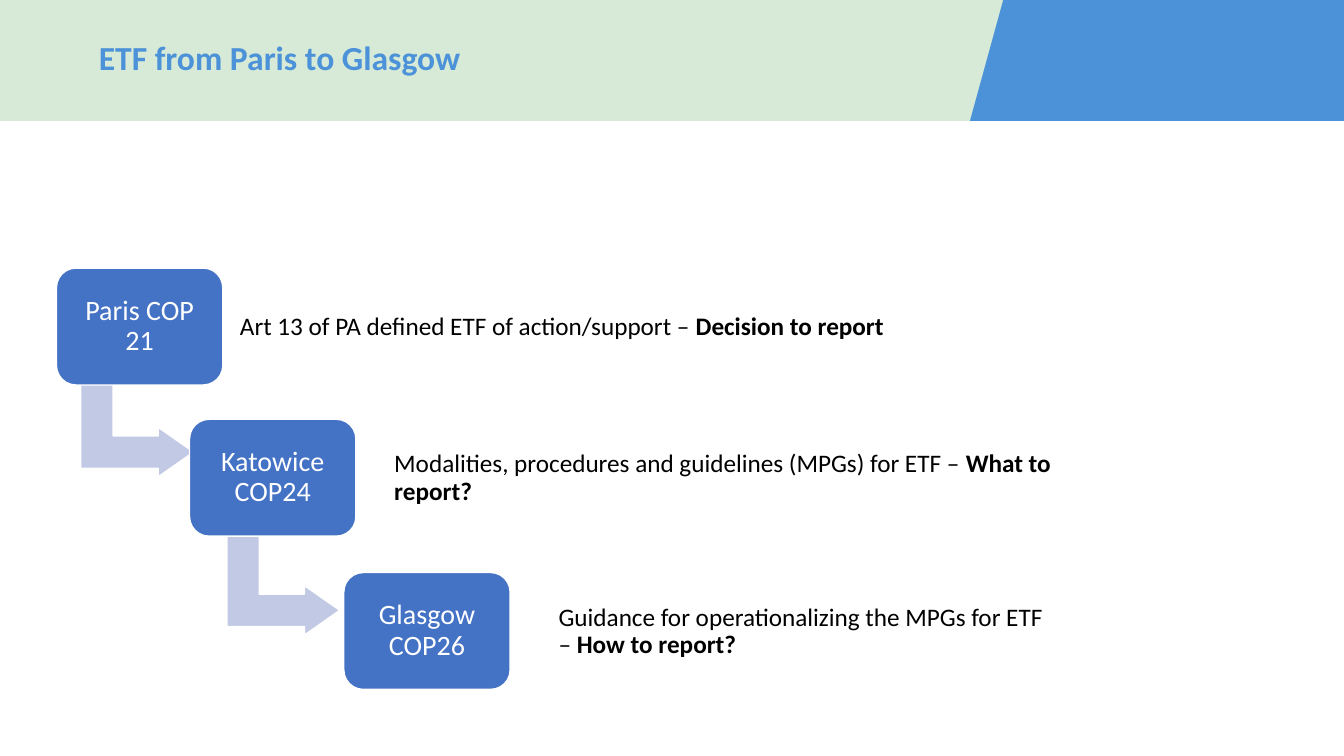
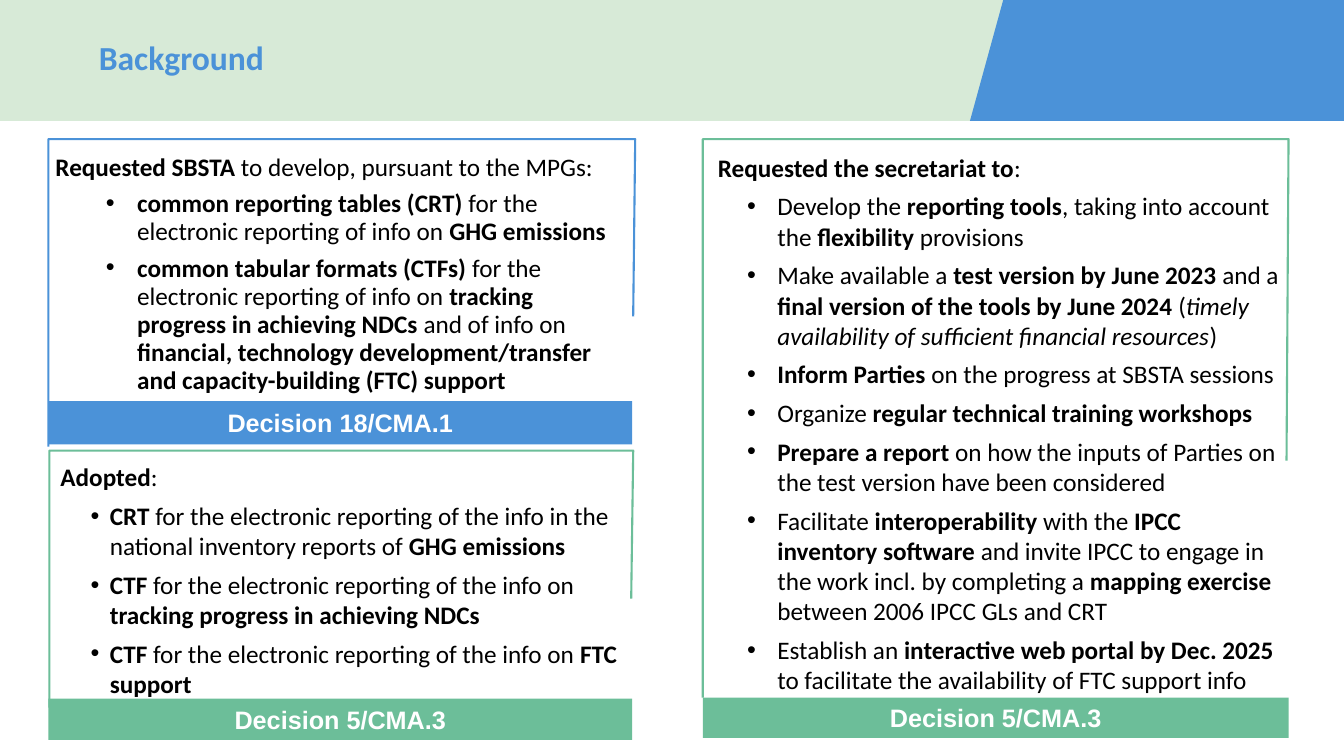
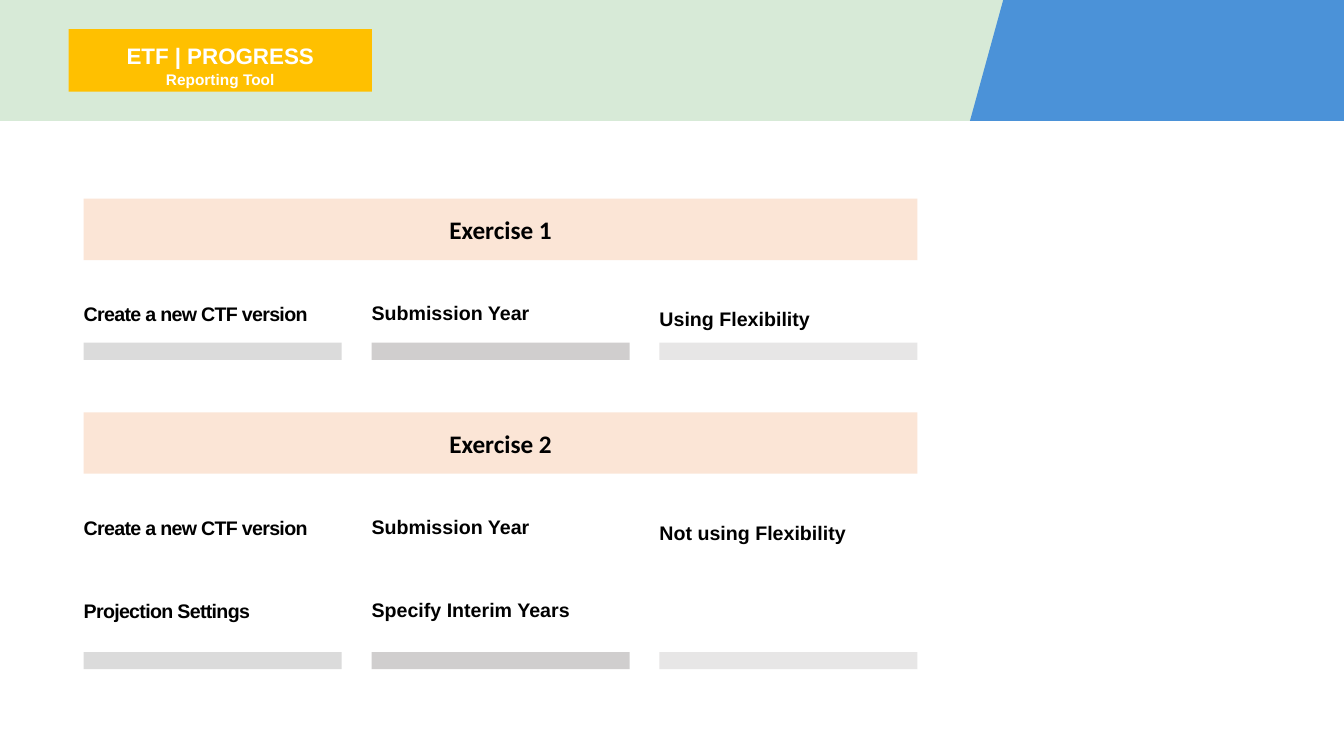
from lxml.etree import SubElement
from pptx import Presentation
from pptx.dml.color import RGBColor
from pptx.enum.shapes import MSO_SHAPE
from pptx.enum.text import MSO_ANCHOR, MSO_AUTO_SIZE, PP_ALIGN
from pptx.oxml.ns import qn
from pptx.util import Inches, Pt

# Shared look
WIDTH, HEIGHT, BAND_HEIGHT = 13.33, 7.5, 1.2
BLUE, GREEN, PALE_GREEN = "4B92D8", "6CBE99", "D7EAD7"
CARD_BLUE, ARROW_BLUE = "4472C4", "C1C9E4"
AMBER, PEACH = "FFC000", "FBE5D6"
WHITE, BLACK = "FFFFFF", "000000"
CENTER = PP_ALIGN.CENTER


def rgb(value):
    return RGBColor.from_string(value)


# Element helpers
def paint(sp, fill=None, line=None, line_width=1):
    sp.shadow.inherit = False
    if fill:
        sp.fill.solid()
        sp.fill.fore_color.rgb = rgb(fill)
    else:
        sp.fill.background()
    if line:
        sp.line.color.rgb = rgb(line)
        sp.line.width = Pt(line_width)
    else:
        sp.line.fill.background()


def place(sp, left, top, width, height):
    sp.left, sp.top = Inches(left), Inches(top)
    sp.width, sp.height = Inches(width), Inches(height)


def frame(sp, insets=(0, 0, 0, 0), anchor=MSO_ANCHOR.MIDDLE):
    tf = sp.text_frame
    tf.word_wrap = True
    tf.auto_size = MSO_AUTO_SIZE.NONE
    tf.vertical_anchor = anchor
    (tf.margin_left, tf.margin_top,
     tf.margin_right, tf.margin_bottom) = [Inches(i) for i in insets]
    return tf


def write(tf, text, size=18, font="Calibri", color=BLACK, bold=False,
          align=PP_ALIGN.LEFT, spacing=None, before=0, after=0,
          bullet=None, tracking=None):
    """Append a paragraph; *...* marks bold and _..._ marks italic."""
    p = tf.paragraphs[0]
    if p.runs:
        p = tf.add_paragraph()
        p.space_before = Pt(before)
    p.alignment = align
    p.space_after = Pt(after)
    if spacing:
        p.line_spacing = spacing
    if bullet:
        indent, hang = bullet
        pPr = p._p.get_or_add_pPr()
        pPr.set("marL", str(Inches(indent)))
        pPr.set("indent", str(-Inches(hang)))
        SubElement(pPr, qn("a:buFont")).set("typeface", "Arial")
        SubElement(pPr, qn("a:buChar")).set("char", "•")
    for i, part in enumerate(text.split("*")):
        for j, piece in enumerate(part.split("_")):
            if not piece:
                continue
            r = p.add_run()
            r.text = piece
            r.font.size, r.font.name = Pt(size), font
            r.font.color.rgb = rgb(color)
            r.font.bold = bold or i % 2 == 1
            r.font.italic = j % 2 == 1
            if tracking:
                r._r.get_or_add_rPr().set("spc", str(int(tracking * 100)))


def add_box(s, left, top, width, height, fill, line=None, kind=MSO_SHAPE.RECTANGLE):
    sp = s.shapes.add_shape(kind, Inches(left), Inches(top), Inches(width), Inches(height))
    paint(sp, fill, line)
    return sp


def add_text(s, left, top, width, height, insets, anchor=MSO_ANCHOR.MIDDLE):
    sp = s.shapes.add_textbox(Inches(left), Inches(top), Inches(width), Inches(height))
    return frame(sp, insets, anchor)


def add_outline(s, points, close=False, **look):
    points = [(Inches(x), Inches(y)) for x, y in points]
    builder = s.shapes.build_freeform(*points[0])
    builder.add_line_segments(points[1:], close=close)
    sp = builder.convert_to_shape()
    paint(sp, **look)
    return sp


def add_label_bar(s, left, top, width, height, fill, text, **style):
    tf = frame(add_box(s, left, top, width, height, fill))
    write(tf, text, bold=True, align=CENTER, **style)


def set_title(s, text):
    place(s.shapes.title, 0.98, 0.29, 8.29, 0.61)
    write(frame(s.shapes.title), text, size=24, color=BLUE, bold=True, spacing=0.9)


def add_bands(s, layout):
    """Draw the header bands and move them to the layout, behind its text."""
    band = add_box(s, 0, 0, WIDTH, BAND_HEIGHT, PALE_GREEN)
    corner = add_outline(s, [(9.62, BAND_HEIGHT), (9.95, 0), (WIDTH, 0),
                             (WIDTH, BAND_HEIGHT)], close=True, fill=BLUE)
    for depth, sp in enumerate((band, corner), start=2):
        layout.shapes.element.insert(depth, sp.element)


# Slide 1
def add_step_arrow(s, left, top, width, height):
    sp = add_box(s, left, top, width, height, ARROW_BLUE, WHITE, MSO_SHAPE.BENT_UP_ARROW)
    sp.rotation = 90
    for i, value in enumerate((0.328, 0.25, 0.358)):
        sp.adjustments[i] = value


def add_step(s, left, top, name, text_left, text_width, text):
    card = add_box(s, left, top, 1.65, 1.16, CARD_BLUE, WHITE, MSO_SHAPE.ROUNDED_RECTANGLE)
    write(frame(card, (0.14, 0.14, 0.14, 0.14)), name, size=20, color=WHITE,
          align=CENTER, spacing=0.9)
    tf = add_text(s, text_left, top + 0.12, text_width, 0.93, (0.07,) * 4)
    write(tf, text, spacing=0.9)


def build_timeline(s):
    set_title(s, "ETF from Paris to Glasgow")
    for left, top in ((0.87, 3.68), (2.32, 5.25)):
        add_step_arrow(s, left, top, 0.98, 1.12)
    steps = [
        (0.56, 2.66, "Paris COP 21", 2.31, 6.91,
         "Art 13 of PA defined ETF of action/support – *Decision to report*"),
        (1.88, 4.16, "Katowice COP24", 3.84, 7.24,
         "Modalities, procedures and guidelines (MPGs) for ETF – *What to report?*"),
        (3.41, 5.68, "Glasgow COP26", 5.47, 5.05,
         "Guidance for operationalizing the MPGs for ETF – *How to report?*"),
    ]
    for step in steps:
        add_step(s, *step)


# Slide 2
def add_decision(s, outline, bar, text_box, color, decision, lead, items, bullet, **style):
    """Panel with an open outline, a lead-in, bullets and a decision bar."""
    left, top, right, bottom, right_end = outline
    add_outline(s, [(left, bottom), (left, top), (right, top), (right - 0.02, right_end)],
                line=color, line_width=1.5)
    add_label_bar(s, *bar, color, decision, font="Arial", color=WHITE)
    tf = add_text(s, *text_box, (0, 0, 0.1, 0.05))
    write(tf, lead, **style)
    for item in items:
        write(tf, item, bullet=bullet, **style)


def build_background(s):
    set_title(s, "Background")
    add_decision(
        s, (6.97, 1.38, 12.78, 6.92, 4.57), (6.97, 6.92, 5.81, 0.4),
        (7.12, 1.48, 5.74, 5.49), GREEN, "Decision 5/CMA.3",
        "*Requested the secretariat to*:",
        ["Develop the *reporting tools*, taking into account the *flexibility* provisions",
         "Make available a *test version by June 2023 *and a *final version of the tools "
         "by June 2024 *(_timely availability of sufficient financial resources_)",
         "*Inform Parties *on the progress at SBSTA sessions",
         "Organize *regular technical training workshops*",
         "*Prepare a report *on how the inputs of Parties on the test version "
         "have been considered",
         "Facilitate *interoperability *with the *IPCC inventory software *and invite IPCC "
         "to engage in the work incl. by completing a *mapping exercise* between "
         "2006 IPCC GLs and CRT",
         "Establish an *interactive web portal by Dec. 2025 *to facilitate the "
         "availability of FTC support info"],
        (0.59, 0.3), before=3, after=3)
    add_decision(
        s, (0.48, 1.38, 6.3, 4.43, 3.14), (0.48, 3.98, 5.79, 0.43),
        (0.55, 1.52, 5.71, 2.44), BLUE, "Decision 18/CMA.1",
        "*Requested SBSTA *to develop, pursuant to the MPGs:",
        ["*common reporting tables (CRT) *for the electronic reporting of info on "
         "*GHG emissions*",
         "*common tabular formats (CTFs) *for the electronic reporting of info on "
         "*tracking progress in achieving NDCs *and of info on *financial, technology "
         "development/transfer and capacity-building (FTC) support*"],
        (0.81, 0.31), before=6, spacing=Pt(20))
    add_decision(
        s, (0.49, 4.47, 6.28, 7.02, 5.94), (0.48, 6.93, 5.79, 0.41),
        (0.6, 4.57, 5.76, 2.42), GREEN, "Decision 5/CMA.3",
        "*Adopted*:",
        ["*CRT *for the electronic reporting of the info in the national inventory "
         "reports of *GHG emissions*",
         "*CTF *for the electronic reporting of the info on *tracking progress in "
         "achieving NDCs*",
         "*CTF *for the electronic reporting of the info on *FTC support*"],
        (0.49, 0.19), before=6)


# Slide 3
def set_badge_title(s):
    sp = s.shapes.title
    place(sp, 0.68, 0.29, 3.01, 0.62)
    geometry = SubElement(sp.element.spPr, qn("a:prstGeom"))
    geometry.set("prst", "roundRect")
    SubElement(geometry, qn("a:avLst"))
    sp.fill.solid()
    sp.fill.fore_color.rgb = rgb(AMBER)
    tf = frame(sp, (0.1, 0.1, 0.1, 0.02))
    for text, size in (("ETF | PROGRESS", 16), ("Reporting Tool", 11)):
        write(tf, text, size=size, font="Arial", color=WHITE, bold=True,
              align=CENTER, spacing=1.07)


def add_exercise(s, top, heading, label_rows, bar_top):
    left, bar_width, pitch = 0.83, 2.56, 2.855
    add_label_bar(s, left, top, 2 * pitch + bar_width, 0.61, PEACH, heading)
    # Each column: label drop, letter spacing, bar colour
    columns = [(0.01, -0.5, "DBDBDB"), (0, None, "D0CECE"), (0.06, None, "E7E6E6")]
    for i, (drop, tracking, color) in enumerate(columns):
        x = left + i * pitch
        add_box(s, x, bar_top, bar_width, 0.17, color)
        for row_top, labels in label_rows:
            if i < len(labels):
                tf = add_text(s, x, row_top + drop, 2.39, 0.29, (0, 0, 0, 0.05),
                              MSO_ANCHOR.BOTTOM)
                write(tf, labels[i], size=14, font="Arial", bold=True, tracking=tracking)


def build_exercises(s):
    set_badge_title(s)
    shared = ["Create a new CTF version", "Submission Year"]
    add_exercise(s, 1.97, "Exercise 1", [(2.98, shared + ["Using Flexibility"])], 3.4)
    add_exercise(s, 4.09, "Exercise 2",
                 [(5.1, shared + ["Not using Flexibility"]),
                  (5.92, ["Projection Settings", "Specify Interim Years"])], 6.47)


def main():
    prs = Presentation()
    prs.slide_width, prs.slide_height = Inches(WIDTH), Inches(HEIGHT)
    layout = prs.slide_layouts[5]
    builders = (build_timeline, build_background, build_exercises)
    slides = [prs.slides.add_slide(layout) for _ in builders]
    add_bands(slides[0], layout)
    for build, s in zip(builders, slides):
        build(s)
    prs.save("out.pptx")


if __name__ == "__main__":
    main()
